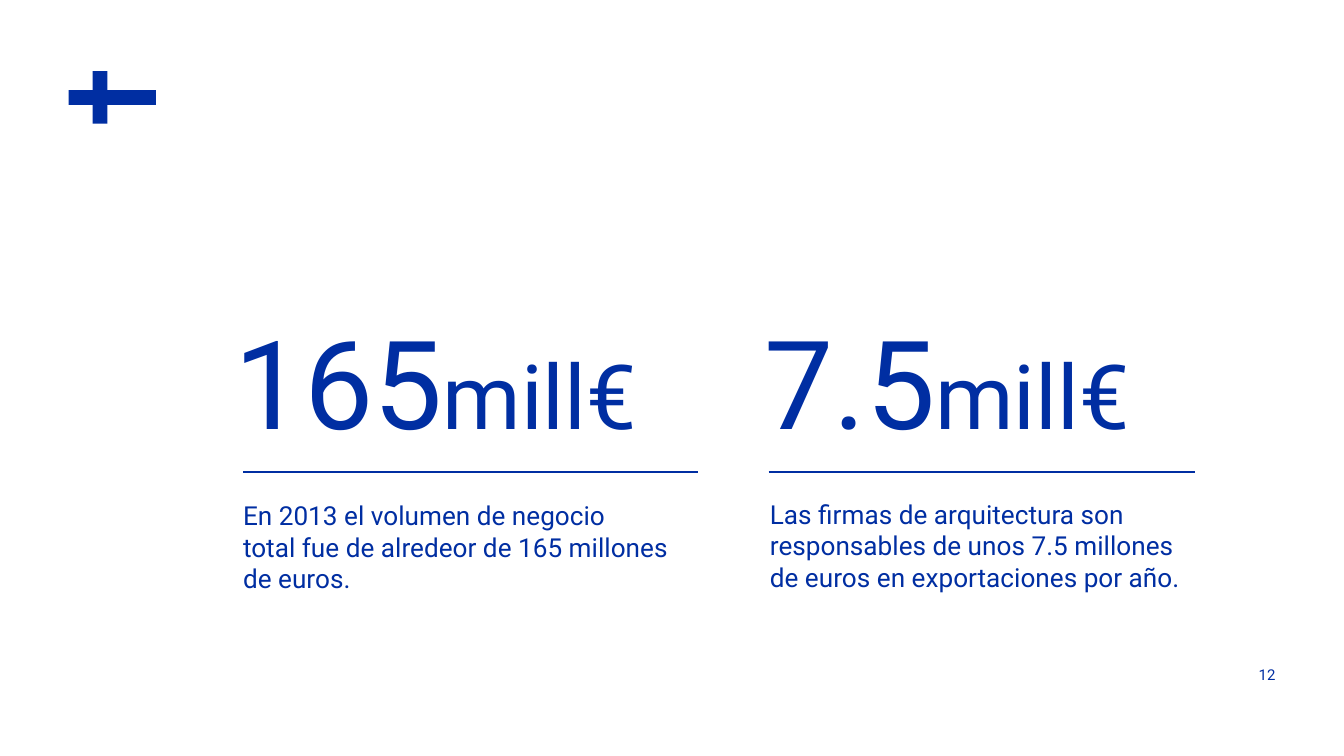
import pptx
import pptx.dml.color
import pptx.enum.shapes
import pptx.enum.text
import pptx.oxml
import pptx.oxml.ns
import pptx.util
from pptx.util import Inches

BLUE = "002EA2"


def color(value):
    return pptx.dml.color.RGBColor.from_string(value)


class SlideBuilder:
    font = "Roboto"
    ink = BLUE

    def __init__(self, slide):
        self.slide = slide
        slide.background.fill.solid()
        slide.background.fill.fore_color.rgb = color("FFFFFF")

    def outline(self, points):
        corners = [(Inches(x), Inches(y)) for x, y in points]
        builder = self.slide.shapes.build_freeform(*corners[0], scale=1.0)
        builder.add_line_segments(corners[1:], close=True)
        emblem = builder.convert_to_shape()
        emblem.shadow.inherit = False
        emblem.fill.solid()
        emblem.fill.fore_color.rgb = color(self.ink)
        emblem.line.fill.background()

    def text(self, left, top, width, height, *parts):
        box = self.slide.shapes.add_textbox(
            Inches(left), Inches(top), Inches(width), Inches(height))
        frame = box.text_frame
        frame.word_wrap = True
        paragraph = frame.paragraphs[0]
        paragraph.text = parts[0][0]
        for words, _ in parts[1:]:
            paragraph.add_run().text = words
        for run in paragraph.runs:
            run.font.name = self.font
            run.font.size = pptx.util.Pt(parts[0][1])
            run.font.color.rgb = color(self.ink)
        for run, (_, size) in zip(paragraph.runs[-len(parts):], parts):
            run.font.size = pptx.util.Pt(size)
        return frame

    def growing_text(self, *arguments):
        frame = self.text(*arguments)
        frame.auto_size = pptx.enum.text.MSO_AUTO_SIZE.SHAPE_TO_FIT_TEXT

    def page_number(self, number):
        frame = self.text(8.7, 4.94, 0.79, 0.16, (number, 8))
        frame.margin_left = frame.margin_right = 0
        frame.margin_top = frame.margin_bottom = 0
        frame.vertical_anchor = pptx.enum.text.MSO_ANCHOR.MIDDLE
        frame.paragraphs[0].alignment = pptx.enum.text.PP_ALIGN.RIGHT

    def rule(self, left, right, y):
        divider = self.slide.shapes.add_connector(
            pptx.enum.shapes.MSO_CONNECTOR.STRAIGHT,
            Inches(left), Inches(y), Inches(right), Inches(y))
        divider.line.width = pptx.util.Pt(1)
        divider.line.fill.solid()
        divider.line.fill.fore_color.rgb = color(self.ink)
        divider._element.spPr.append(pptx.oxml.parse_xml(
            f"<a:effectLst {pptx.oxml.ns.nsdecls('a')}/>"))

    def statistic(self, amount, amount_left, amount_width, rule_left, rule_right,
                  note, note_left, note_top):
        self.growing_text(note_left, note_top, 3.48, 0.81, (note, 14))
        self.rule(rule_left, rule_right, 3.51)
        self.growing_text(amount_left, 2.23, amount_width, 1.21,
                          (amount, 66), ("mill€", 48))


def main():
    deck = pptx.Presentation()
    deck.slide_width = Inches(10)
    deck.slide_height = deck.slide_width * 9 // 16
    page = SlideBuilder(deck.slides.add_slide(deck.slide_layouts[6]))

    page.outline([
        (0.69, 0.53), (0.69, 0.67), (0.51, 0.67), (0.51, 0.78),
        (0.69, 0.78), (0.69, 0.92), (0.8, 0.92), (0.8, 0.78),
        (1.16, 0.78), (1.16, 0.67), (0.8, 0.67), (0.8, 0.53)])
    page.page_number("12")
    page.statistic(
        "165", 1.65, 3.52, 1.81, 5.19,
        "En 2013 el volumen de negocio \vtotal fue de alredeor de 165 millones "
        "\vde euros.  ",
        1.71, 3.67)
    page.statistic(
        "7.5", 5.59, 3.5, 5.72, 8.89,
        "Las firmas de arquitectura son responsables de unos 7.5 millones "
        "\vde euros en exportaciones por año.",
        5.63, 3.66)
    deck.save("out.pptx")


if __name__ == "__main__":
    main()
